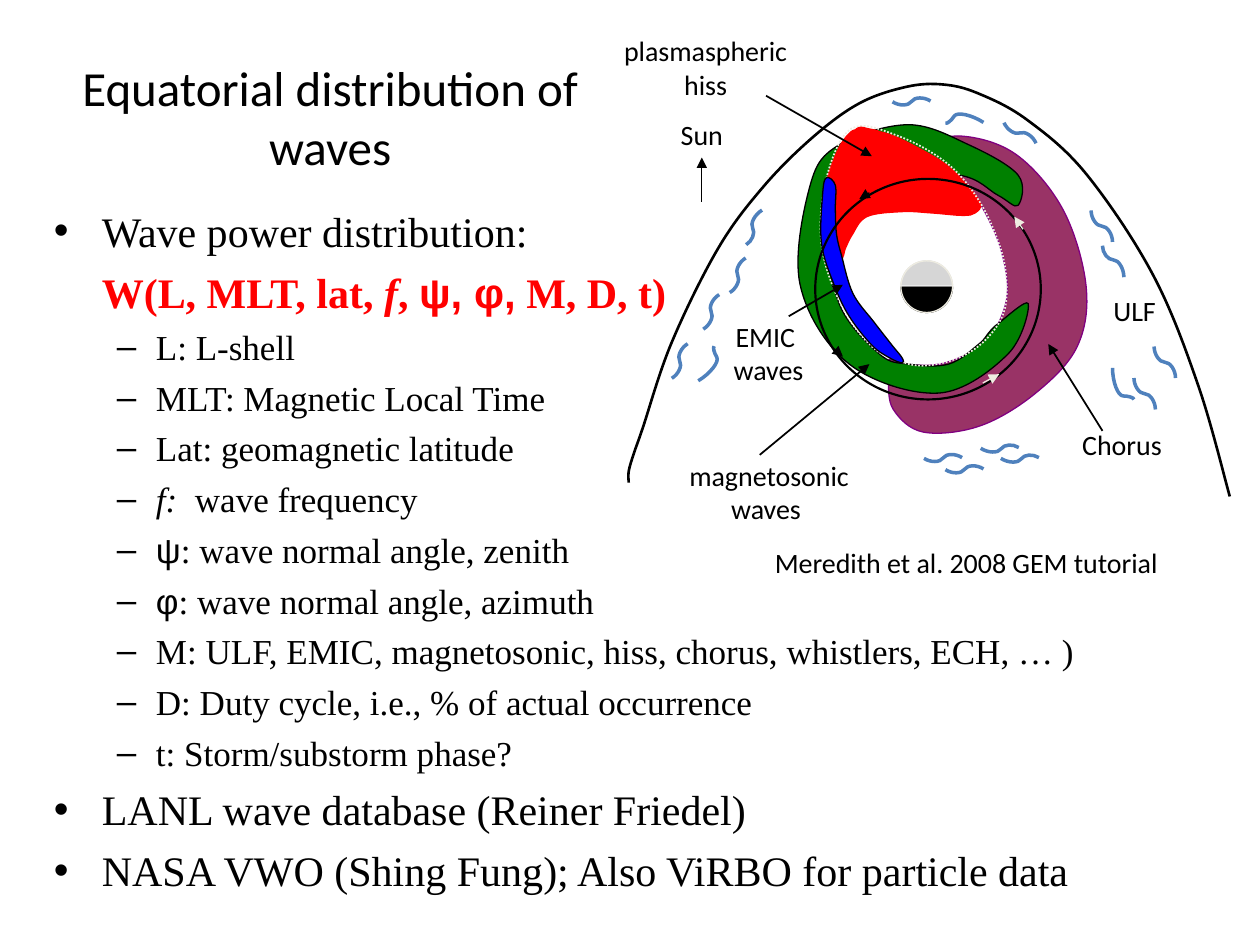
from lxml.etree import SubElement
from pptx import Presentation
from pptx.dml.color import RGBColor
from pptx.enum.dml import MSO_LINE
from pptx.enum.shapes import MSO_CONNECTOR as LINK, MSO_SHAPE as SHAPE
from pptx.enum.text import MSO_ANCHOR as ANCHOR, PP_ALIGN as ALIGN
from pptx.oxml.ns import qn
from pptx.util import Inches, Pt

BLACK, WHITE = RGBColor(0, 0, 0), RGBColor(255, 255, 255)
RED, GREEN, BLUE = RGBColor(255, 0, 0), RGBColor(0, 128, 0), RGBColor(0, 0, 255)
PLUM, PURPLE = RGBColor(0x99, 0x33, 0x66), RGBColor(0x80, 0, 0x80)
CREAM, STEEL = RGBColor(0xEE, 0xEC, 0xE1), RGBColor(0x4F, 0x81, 0xBD)
SERIF, SANS, GREEK = "Times New Roman", "Calibri", "Arial"

CHORUS = [(2.06, 2.85), (2.05, 3), (2.09, 3.25), (2.33, 3.43), (2.78, 3.38), (3.22, 3.12),
          (3.55, 2.75), (3.62, 2.27), (3.44, 1.67), (3.07, 1.23), (2.63, 1.08), (2.27, 1.17),
          (2.42, 1.24), (2.66, 1.46), (2.81, 1.67), (2.95, 2), (2.99, 2.37), (2.83, 2.7),
          (2.5, 2.88), (2.17, 2.89)]
MAGNETOSONIC = [(2.92, 2.57), (2.84, 2.65), (2.77, 2.73), (2.53, 2.89), (2.21, 2.89),
                (1.98, 2.81), (1.66, 2.41), (1.58, 1.78), (1.9, 1.39), (2.61, 1.39),
                (2.92, 1.55), (3.08, 1.63), (3.08, 1.39), (2.69, 1.15), (2.21, 0.99),
                (1.66, 1.15), (1.43, 1.47), (1.35, 2.26), (1.74, 2.89), (2.45, 3.12),
                (3, 2.81), (3.16, 2.41)]
MAGNETOPAUSE = [(-0.01, 3.83), (-0.01, 3.74), (0.03, 3.6), (0.1, 3.4), (0.33, 2.72),
                (0.7, 1.97), (1.06, 1.48), (1.45, 1.09), (1.82, 0.82), (2.19, 0.69),
                (2.48, 0.67), (2.76, 0.74), (3.15, 0.95), (3.62, 1.38), (4.15, 2.18),
                (4.51, 3.06), (4.76, 3.94)]
HISS = [(1.68, 2.02), (1.76, 1.87), (1.88, 1.72), (2.16, 1.68), (2.39, 1.69), (2.64, 1.71),
        (2.74, 1.69), (2.78, 1.61), (2.64, 1.43), (2.5, 1.3), (2.28, 1.17), (2.04, 1.06),
        (1.82, 1.03), (1.74, 1.06), (1.65, 1.19), (1.57, 1.41), (1.62, 1.45), (1.63, 1.67),
        (1.65, 1.9)]
PLASMAPAUSE = [(2.18, 2.88), (2.37, 2.9), (2.61, 2.84), (2.81, 2.71), (2.95, 2.52),
               (2.99, 2.31), (2.95, 2), (2.78, 1.61), (2.52, 1.3), (2.13, 1.08), (1.76, 1.02),
               (1.56, 1.41), (1.52, 1.94), (1.68, 2.43), (1.93, 2.76)]
HISS_TIP = [(1.97, 1.04), (1.88, 1.02), (1.83, 1.01), (1.79, 1.03), (1.83, 1.05),
            (1.89, 1.05), (1.93, 1.05)]
HISS_EDGE = [(1.57, 1.41), (1.54, 1.58), (1.53, 1.79), (1.53, 1.92), (1.58, 2.15),
             (1.71, 1.98), (1.68, 1.39)]
EMIC = [(1.56, 1.41), (1.63, 1.47), (1.63, 1.66), (1.64, 1.86), (1.68, 2.03), (1.77, 2.33),
        (1.94, 2.56), (2.08, 2.74), (2.16, 2.84), (2.16, 2.88), (2.06, 2.84), (1.92, 2.74),
        (1.74, 2.51), (1.62, 2.26), (1.52, 1.93), (1.53, 1.53)]
REGIONS = [(CHORUS, PLUM, PURPLE, 0.75), (MAGNETOSONIC, GREEN, BLACK, 0.75),
           (MAGNETOPAUSE, None, BLACK, 1.5), (HISS, RED, RED, 0.75),
           (PLASMAPAUSE, None, CREAM, 1), (HISS_TIP, RED, RED, 0.75),
           (HISS_EDGE, RED, None, 0), (EMIC, BLUE, BLACK, 0.75)]
LABELS = [("EMIC \nwaves", 0.62, 2.58, 0.96, 0.44, False),
          ("plasmaspheric\nhiss", -0.26, 0.28, 1.72, 0.51, True),
          ("Sun", 0.23, 0.91, 0.68, 0.32, True),
          ("Chorus", 3.25, 3.33, 1.31, 0.39, True),
          ("magnetosonic\nwaves ", 0.24, 3.67, 1.73, 0.47, True),
          ("Meredith et al. 2008 GEM tutorial", 0.92, 4.17, 3.5, 0.58, True),
          ("ULF", 3.67, 2.27, 0.67, 0.39, False)]
ARROWS = [(2.8, 3.04, 2.93, 2.97, CREAM, 0.75), (3.12, 1.82, 3.05, 1.72, CREAM, 0.75),
          (1.9, 1.53, 1.82, 1.58, BLACK, 0.75), (1.61, 2.76, 1.69, 2.83, BLACK, 0.75),
          (1.08, 0.76, 1.92, 1.24, BLACK, 1), (0.57, 1.6, 0.57, 1.25, BLACK, 0.75),
          (1.26, 2.51, 1.69, 2.26, BLACK, 1), (3.75, 3.42, 3.32, 2.73, BLACK, 1),
          (1.03, 3.61, 1.9, 2.89, BLACK, 1)]
WAVES = {149: [(0.52, 2.39, 0.5), (0.86, 1.72, 0.45), (0.73, 2.1, 0.5), (0.27, 2.78, 0.5),
               (0.48, 2.8, 0.89)],
         270: [(3.96, 3.04, 0.5), (3.71, 1.99, 0.45), (3.62, 1.71, 0.5), (4.12, 2.79, 0.5),
               (3.79, 2.96, 0.89)],
         247: [(2.97, 0.97, 0.5)],
         33: [(2.81, 3.47, 0.45), (2.36, 3.55, 0.5), (2.11, 0.72, 0.5), (2.53, 0.89, 0.89),
              (2.97, 3.55, 0.45), (2.53, 3.64, 0.5)]}
ITEMS = [(0, "•", [("Wave power distribution:", {})]),
         (0, None, [("W(L, MLT, lat,", {}), (" f", {"italic": True}), (", ", {}),
                    ("ψ, φ,", {"font": GREEK}), (" M, D, t)", {})]),
         (1, "–", [("L: L-shell", {})]),
         (1, "–", [("MLT: Magnetic Local Time", {})]),
         (1, "–", [("Lat: geomagnetic latitude", {})]),
         (1, "–", [("f: ", {"italic": True}), (" wave frequency", {})]),
         (1, "–", [("ψ", {"font": GREEK}), (": wave normal angle, zenith", {})]),
         (1, "–", [("φ", {"font": GREEK}), (": wave normal angle, azimuth", {})]),
         (1, "–", [("M: ULF, EMIC, magnetosonic, hiss, chorus, whistlers, ECH, … )", {})]),
         (1, "–", [("D: Duty cycle, i.e., % of actual occurrence", {})]),
         (1, "–", [("t: Storm/substorm phase?", {})]),
         (0, "•", [("LANL wave database (Reiner Friedel)", {})]),
         (0, "•", [("NASA VWO (Shing Fung); Also ViRBO for particle data", {})])]


def add_span(para, text, size=16, font=SANS, color=BLACK, bold=False, italic=False):
    """Append formatted text to a paragraph."""
    span = para.add_run()
    span.text = text
    span.font.size, span.font.name = Pt(size), font
    span.font.bold, span.font.italic = bold, italic
    span.font.color.rgb = color


def paint(shape, fill=None, line=None, width=0.75):
    """Set fill and outline, leaving out whichever is None."""
    shape.shadow.inherit = False
    for part, color in ((shape.fill, fill), (shape.line.fill, line)):
        if color is None:
            part.background()
        else:
            part.solid()
            part.fore_color.rgb = color
    if line is not None:
        shape.line.width = Pt(width)


def add_link(page, kind, ends, color, width):
    """Add a connector without shadow and return it."""
    link = page.shapes.add_connector(kind, *map(Inches, ends))
    link.line.color.rgb, link.line.width = color, Pt(width)
    SubElement(link.element.spPr, qn("a:effectLst"))
    return link


def add_curve(page, left, top, points, closed):
    """Draw a smooth outline whose tangents follow the neighbouring points."""
    count = len(points)

    def at(index):
        return points[index % count if closed else min(max(index, 0), count - 1)]

    def handle(index, sign):
        return tuple(p + sign * (after - before) / 6 for p, before, after
                     in zip(at(index), at(index - 1), at(index + 1)))

    knots = [knot for i in range(count if closed else count - 1)
             for knot in (handle(i, 1), handle(i + 1, -1), at(i + 1))]
    start, *rest = [(Inches(left + x), Inches(top + y)) for x, y in [points[0]] + knots]
    builder = page.shapes.build_freeform(*start, scale=1.0)
    builder.add_line_segments(rest, close=closed)
    shape = builder.convert_to_shape()
    steps = list(shape.element.iter(qn("a:lnTo")))
    for i in range(0, len(steps), 3):
        bezier = steps[i].makeelement(qn("a:cubicBezTo"))
        steps[i].addprevious(bezier)
        for step in steps[i:i + 3]:
            bezier.append(step[0])
            step.getparent().remove(step)
    return shape


def add_title(page, left, top, width, height):
    """Place the centred heading."""
    frame = page.shapes.add_textbox(*map(Inches, (left, top, width, height))).text_frame
    frame.word_wrap, frame.vertical_anchor = True, ANCHOR.MIDDLE
    frame.paragraphs[0].alignment = ALIGN.CENTER
    add_span(frame.paragraphs[0], "Equatorial distribution of waves", size=28)


def add_body(page, left, top, width, height):
    """Place the two-level bullet list."""
    frame = page.shapes.add_textbox(*map(Inches, (left, top, width, height))).text_frame
    frame.word_wrap = True
    for i, (level, bullet, spans) in enumerate(ITEMS):
        para = frame.add_paragraph() if i else frame.paragraphs[0]
        size = 20 if level else 24
        para.level, para.space_before = level, Pt(size / 4 if i else 0)
        props = para._p.get_or_add_pPr()
        hang = (0.31 if level else 0.38) if bullet else 0
        props.set("marL", str(Inches(0.81 if level else 0.38)))
        props.set("indent", str(-Inches(hang)))
        if bullet:
            SubElement(props, qn("a:buFont"), typeface=GREEK)
            SubElement(props, qn("a:buChar"), char=bullet)
        else:
            SubElement(props, qn("a:buNone"))
        look = {"size": size, "font": SERIF, "bold": not bullet, "color": BLACK if bullet else RED}
        for text, extra in spans:
            add_span(para, text, **{**look, **extra})


def add_regions(page, left, top):
    """Draw the wave regions, the Earth and the geosynchronous circle."""
    for points, fill, line, width in REGIONS:
        shape = add_curve(page, left, top, points, points is not MAGNETOPAUSE)
        paint(shape, fill, line, width)
        if points is PLASMAPAUSE:
            shape.line.dash_style = MSO_LINE.ROUND_DOT
    earth = (2.15, 2.07, 0.41, 0.41)
    for kind, (x, y, width, height), fill, line, weight in (
            (SHAPE.OVAL, earth, BLACK, BLACK, 0.75),
            (SHAPE.RECTANGLE, (2.11, 1.92, 0.49, 0.35), WHITE, WHITE, 1),
            (SHAPE.OVAL, earth, None, CREAM, 0.75),
            (SHAPE.OVAL, (1.47, 1.42, 1.79, 1.75), None, BLACK, 1.25)):
        shape = page.shapes.add_shape(kind, *map(Inches, (left + x, top + y, width, height)))
        paint(shape, fill, line, weight)
        if kind == SHAPE.RECTANGLE:
            for color, alpha in zip(shape.element.spPr.iter(qn("a:srgbClr")), (84000, 51000)):
                SubElement(color, qn("a:alpha"), val=str(alpha))


def add_labels(page, left, top):
    """Place the region names and the credit."""
    for text, x, y, width, height, filled in LABELS:
        area = [Inches(n) for n in (left + x, top + y, width, height)]
        if filled:
            box = page.shapes.add_shape(SHAPE.RECTANGLE, *area)
            paint(box, WHITE)
        else:
            box = page.shapes.add_textbox(*area)
        frame = box.text_frame
        frame.word_wrap, frame.vertical_anchor = False, ANCHOR.MIDDLE
        for i, line in enumerate(text.split("\n")):
            para = frame.add_paragraph() if i else frame.paragraphs[0]
            para.alignment = ALIGN.CENTER
            add_span(para, line)


def add_arrows_and_waves(page, left, top):
    """Draw the pointers and the wavy ULF marks."""
    for x1, y1, x2, y2, color, width in ARROWS:
        ends = (left + x1, top + y1, left + x2, top + y2)
        arrow = add_link(page, LINK.STRAIGHT, ends, color, width)
        SubElement(arrow.line._get_or_add_ln(), qn("a:tailEnd"), type="triangle")
    for angle, marks in WAVES.items():
        for x, y, bend in marks:
            ends = (left + x + 0.25, top + y, left + x, top + y + 0.17)
            wave = add_link(page, LINK.CURVE, ends, STEEL, 2)
            wave.element.spPr.find(qn("a:xfrm")).set("rot", str(angle * 60000))
            guides = next(wave.element.iter(qn("a:avLst")))
            SubElement(guides, qn("a:gd"), name="adj1", fmla=f"val {round(bend * 100000)}")


def main():
    """Build and save the deck."""
    deck = Presentation()
    deck.slide_width, deck.slide_height = Inches(10), Inches(7.5)
    page = deck.slides.add_slide(deck.slide_layouts[6])
    add_body(page, 0.33, 1.58, 9, 5.67)
    for add_part in (add_regions, add_labels, add_arrows_and_waves):
        add_part(page, 5, 0)
    add_title(page, 0.5, 0.3, 4.24, 1.25)
    deck.save("out.pptx")


if __name__ == "__main__":
    main()
